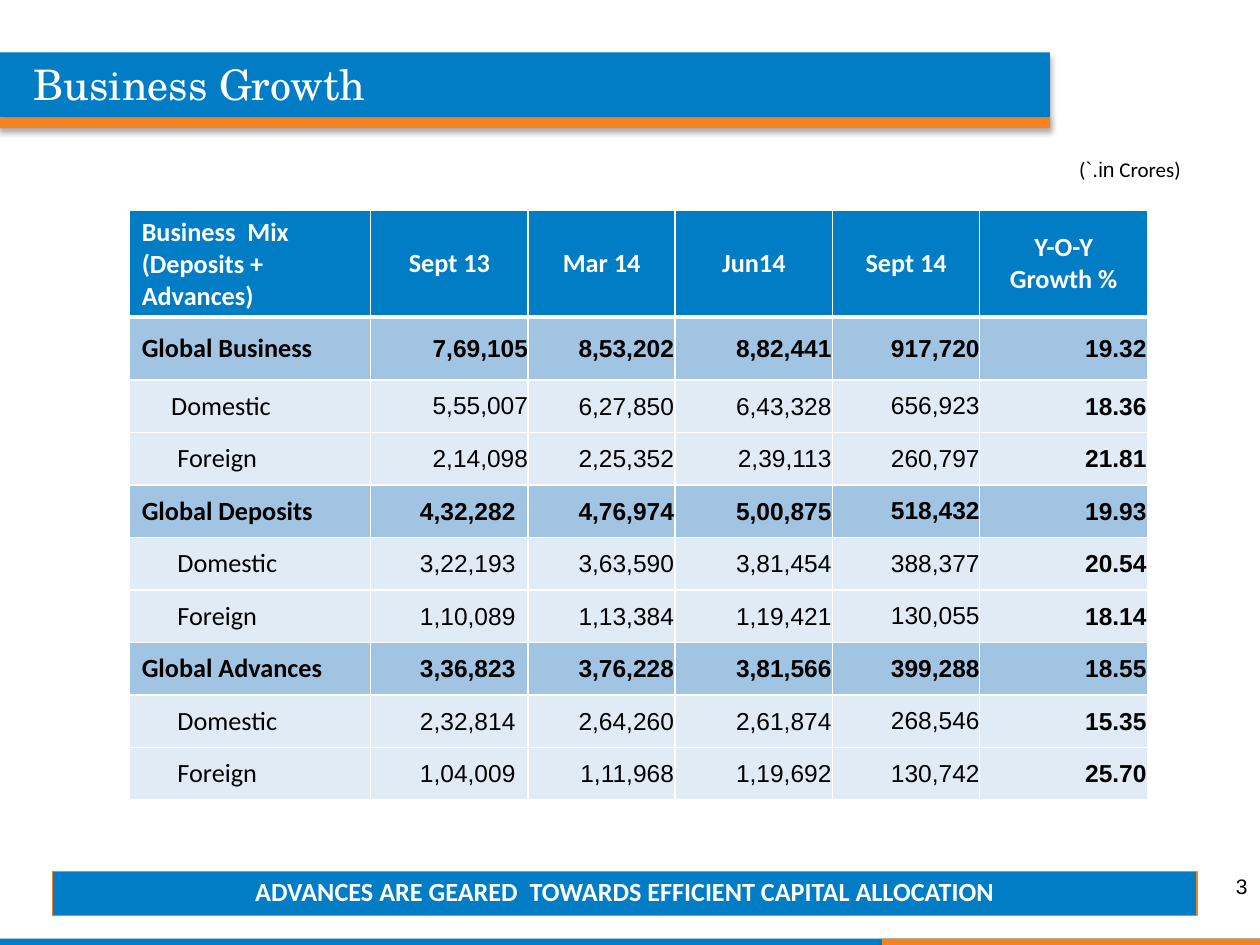
from dataclasses import dataclass

from lxml.etree import SubElement
from pptx import Presentation
from pptx.dml.color import RGBColor
from pptx.enum.shapes import MSO_SHAPE as Preset
from pptx.enum.text import MSO_ANCHOR as Anchor, PP_ALIGN as Align
from pptx.oxml.ns import qn
from pptx.util import Emu, Pt

EMU_PER_PX = 7620  # 120 px to the inch


@dataclass(frozen=True)
class Theme:
    blue: str = "007DC5"
    orange: str = "F58220"
    total_fill: str = "A1C4E3"
    detail_fill: str = "E0EBF6"
    white: str = "FFFFFF"
    black: str = "000000"
    title_font: str = "TeX Gyre Schola"
    label_font: str = "Calibri"
    figure_font: str = "Arial"
    title_size: int = 24
    label_size: int = 15
    figure_size: int = 14
    note_size: int = 12


THEME = Theme()

HEADINGS = ["Business  Mix\n(Deposits + Advances)", "Sept 13", "Mar 14", "Jun14",
            "Sept 14", "Y-O-Y\nGrowth %"]
COLUMN_WIDTHS = [230, 150, 140, 150, 140, 160]
# label, label indent (0 marks a total), right margin of Sept 13, figures
ROWS = [
    ("Global Business", 0, 0, ["7,69,105", "8,53,202", "8,82,441", "917,720", "19.32"]),
    ("Domestic", 28, 0, ["5,55,007", "6,27,850", "6,43,328", "656,923", "18.36"]),
    ("Foreign", 34, 0, ["2,14,098", "2,25,352", "2,39,113", "260,797", "21.81"]),
    ("Global Deposits", 0, 12, ["4,32,282", "4,76,974", "5,00,875", "518,432", "19.93"]),
    ("Domestic", 34, 12, ["3,22,193", "3,63,590", "3,81,454", "388,377", "20.54"]),
    ("Foreign", 34, 12, ["1,10,089", "1,13,384", "1,19,421", "130,055", "18.14"]),
    ("Global Advances", 0, 12, ["3,36,823", "3,76,228", "3,81,566", "399,288", "18.55"]),
    ("Domestic", 34, 12, ["2,32,814", "2,64,260", "2,61,874", "268,546", "15.35"]),
    ("Foreign", 34, 12, ["1,04,009", "1,11,968", "1,19,692", "130,742", "25.70"]),
]


def px(length):
    return Emu(length * EMU_PER_PX)


def rgb(color):
    return RGBColor.from_string(color)


def write(frame, text, *, size, font=THEME.label_font, color=THEME.black,
          bold=False, align=Align.LEFT, indent=0):
    """Fill a frame; text is a string or a list of (text, font) runs."""
    runs = [(text, font)] if isinstance(text, str) else text
    paragraph = frame.paragraphs[0]
    for run_text, run_font in runs:
        for number, line in enumerate(run_text.split("\n")):
            if number:
                paragraph = frame.add_paragraph()
            paragraph.alignment = align
            if indent:
                paragraph._p.get_or_add_pPr().set("marL", str(px(indent)))
            run = paragraph.add_run()
            run.text = line
            run.font.name, run.font.size, run.font.bold = run_font, Pt(size), bold
            run.font.color.rgb = rgb(color)


def add_text(slide, box, text, anchor=Anchor.TOP, **text_format):
    frame = slide.shapes.add_textbox(*map(px, box)).text_frame
    frame.word_wrap = True
    frame.vertical_anchor = anchor
    write(frame, text, **text_format)


def add_bar(slide, box, fill, line=None, shadow=True):
    bar = slide.shapes.add_shape(Preset.RECTANGLE, *map(px, box))
    bar.shadow.inherit = False
    bar.fill.solid()
    bar.fill.fore_color.rgb = rgb(fill)
    if line:
        bar.line.color.rgb = rgb(line)
        bar.line.width = Pt(0.75)
    else:
        bar.line.fill.background()
    if shadow:
        effects = bar._element.spPr.find(qn("a:effectLst"))
        outer = SubElement(effects, qn("a:outerShdw"), blurRad=str(Pt(3.5)),
                           dist=str(Pt(2.2)), dir="5400000", rotWithShape="0")
        tint = SubElement(outer, qn("a:srgbClr"), val=THEME.black)
        SubElement(tint, qn("a:alpha"), val="32000")


def style_cell(cell, fill, margins, top=1, bottom=1):
    properties = cell._tc.get_or_add_tcPr()
    for side, width in zip("LRTB", (1, 1, top, bottom)):
        border = SubElement(properties, qn(f"a:ln{side}"), w=str(Pt(width)))
        solid = SubElement(border, qn("a:solidFill"))
        SubElement(solid, qn("a:srgbClr"), val=THEME.white)
    cell.fill.solid()
    cell.fill.fore_color.rgb = rgb(fill)
    cell.vertical_anchor = Anchor.MIDDLE
    (cell.margin_left, cell.margin_top,
     cell.margin_right, cell.margin_bottom) = map(px, margins)


def add_title_band(slide, left, top, width):
    add_bar(slide, (left, top, width, 62), THEME.blue)
    add_bar(slide, (left, top + 62, width, 10), THEME.orange)
    add_text(slide, (left + 20, top, 830, 60), "Business Growth",
             size=THEME.title_size, font=THEME.title_font, color=THEME.white)


def add_business_table(slide, left, top):
    row_heights = [60, 60] + [50] * (len(ROWS) - 1)
    table = slide.shapes.add_table(
        len(row_heights), len(COLUMN_WIDTHS), px(left), px(top),
        px(sum(COLUMN_WIDTHS)), px(sum(row_heights))).table
    for column, width in zip(table.columns, COLUMN_WIDTHS):
        column.width = px(width)
    for row, height in zip(table.rows, row_heights):
        row.height = px(height)
    label_margins = (12, 6, 12, 6)

    # Header row
    for col, heading in enumerate(HEADINGS):
        cell = table.cell(0, col)
        style_cell(cell, THEME.blue, label_margins, bottom=3)
        write(cell.text_frame, heading, size=THEME.label_size, color=THEME.white,
              bold=True, align=Align.CENTER if col else Align.LEFT)

    # Totals and their details
    for row, (label, indent, sept_margin, figures) in enumerate(ROWS, start=1):
        total = indent == 0
        fill = THEME.total_fill if total else THEME.detail_fill
        top_border = 3 if row == 1 else 1
        cell = table.cell(row, 0)
        style_cell(cell, fill, label_margins, top=top_border)
        write(cell.text_frame, label, size=THEME.label_size, bold=total, indent=indent)
        for col, (figure, margin) in enumerate(zip(figures, (sept_margin, 1, 1, 0, 1)), 1):
            inset = min(margin, 1)
            cell = table.cell(row, col)
            style_cell(cell, fill, (inset, inset, margin, 0), top=top_border)
            write(cell.text_frame, figure, size=THEME.figure_size, font=THEME.figure_font,
                  bold=total or col == len(figures), align=Align.RIGHT)


def add_message_bar(slide, left, top, width, height):
    add_bar(slide, (left, top, width, height), THEME.blue, line=THEME.orange, shadow=False)
    add_text(slide, (left + 50, top - 2, width - 100, height),
             "ADVANCES ARE GEARED  TOWARDS EFFICIENT CAPITAL ALLOCATION",
             size=THEME.label_size, color=THEME.white, bold=True, align=Align.CENTER)


def add_footer(slide, left, top, width):
    blue_width = width * 7 // 10
    add_bar(slide, (left, top, width, 6), THEME.blue)
    add_bar(slide, (left + blue_width, top, width - blue_width, 6), THEME.orange)
    add_text(slide, (left + width - 280, top - 74, 280, 48), "3", anchor=Anchor.MIDDLE,
             size=THEME.note_size, font=THEME.figure_font, align=Align.RIGHT)


def main():
    deck = Presentation()
    deck.slide_width, deck.slide_height = px(1200), px(900)
    slide = deck.slides.add_slide(deck.slide_layouts[6])

    add_title_band(slide, 0, 50, 1000)
    # Unit note
    add_text(slide, (1016, 143, 160, 36),
             [("(", THEME.label_font), ("`.in", THEME.figure_font),
              (" Crores)", THEME.label_font)], size=THEME.note_size)
    add_business_table(slide, 123, 200)
    add_message_bar(slide, 50, 830, 1090, 42)
    add_footer(slide, 0, 894, 1200)
    deck.save("out.pptx")


if __name__ == "__main__":
    main()
